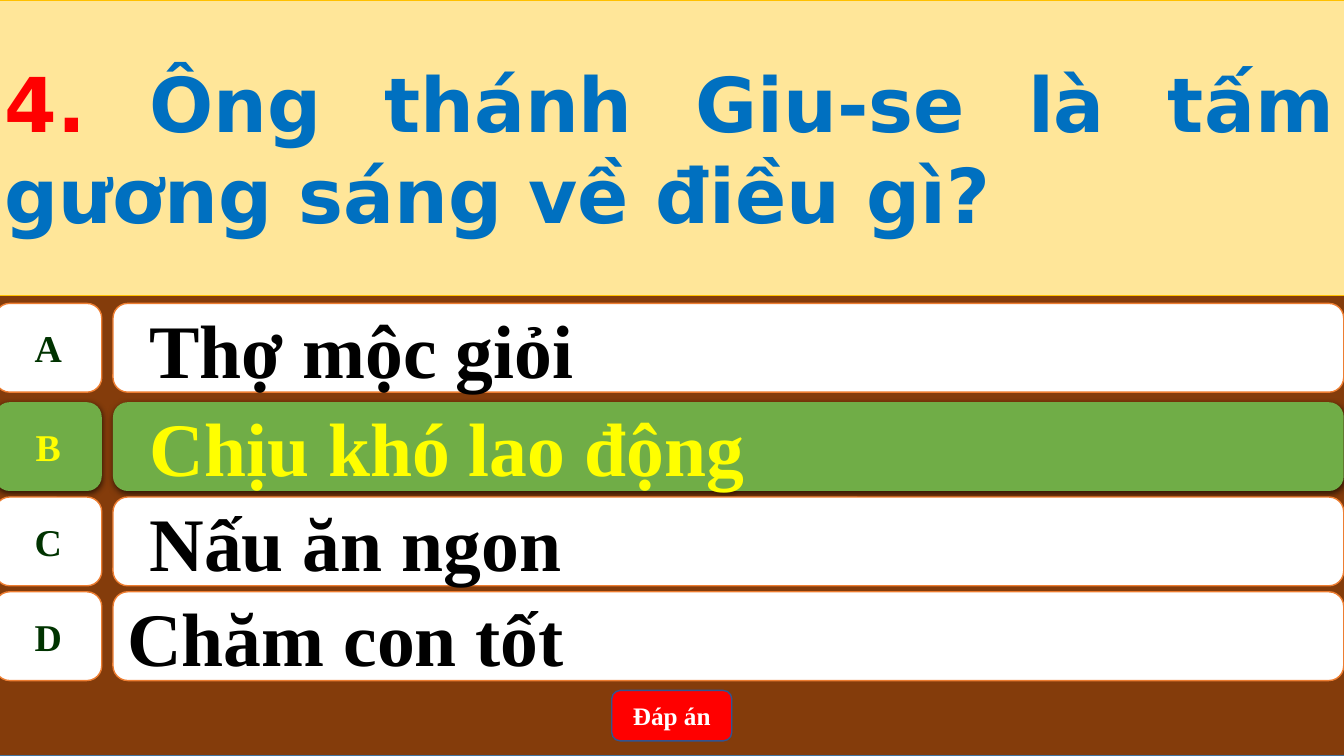
from lxml.etree import SubElement
from pptx import Presentation
from pptx.dml.color import RGBColor
from pptx.enum.shapes import MSO_SHAPE as SHAPE
from pptx.enum.text import MSO_ANCHOR as ANCHOR, PP_ALIGN as ALIGN
from pptx.oxml.ns import qn
from pptx.util import Pt

SERIF = "Times New Roman"
LEFT, WIDTH = -3.6, 964.1
ROW_HEIGHT = 63.4
# letter, answer, top, is indented, is correct
CHOICES = [
    ("A", "Thợ mộc giỏi", 216.7, True, False),
    ("B", "Chịu khó lao động", 287.3, True, True),
    ("C", "Nấu ăn ngon", 355, True, False),
    ("D", "Chăm con tốt", 422.7, False, False),
]


def rgb(color):
    return RGBColor.from_string(color)


def add_box(slide, preset, left, top, width, height, fill, line=None, weight=1):
    box = slide.shapes.add_shape(preset, Pt(left), Pt(top), Pt(width), Pt(height))
    box.shadow.inherit = False
    box.fill.solid()
    box.fill.fore_color.rgb = rgb(fill)
    if line:
        box.line.color.rgb = rgb(line)
        box.line.width = Pt(weight)
    else:
        box.line.fill.background()
    return box


def style_run(run, size, color, font=SERIF):
    run.font.name = font
    run.font.size = Pt(size)
    run.font.bold = True
    run.font.color.rgb = rgb(color)


def write(box, text, size, color, align=ALIGN.CENTER, wrap=True):
    frame = box.text_frame
    frame.text = text
    frame.word_wrap = wrap
    frame.vertical_anchor = ANCHOR.MIDDLE
    paragraph = frame.paragraphs[0]
    paragraph.alignment = align
    style_run(paragraph.runs[0], size, color)
    return paragraph


def add_shadow(box):
    effects = box._element.spPr.find(qn("a:effectLst"))
    shadow = SubElement(effects, qn("a:outerShdw"), blurRad=str(Pt(4.5)),
                        dist=str(Pt(1.5)), dir="5400000", algn="ctr", rotWithShape="0")
    black = SubElement(shadow, qn("a:srgbClr"), val="000000")
    SubElement(black, qn("a:alpha"), val="63000")


def add_question(slide, number, question):
    banner = add_box(slide, SHAPE.RECTANGLE, LEFT, 0, WIDTH, 211, "FFE699", "FFC000", 0.5)
    paragraph = write(banner, number, 54, "FF0000", ALIGN.JUSTIFY)
    paragraph.add_run().text = question
    for run, color in zip(paragraph.runs, ("FF0000", "0070C0")):
        style_run(run, 54, color, "DejaVu Sans")


def add_choice(slide, letter, answer, top, indented, correct):
    if correct:
        fill, line, letter_color, answer_color = "70AD47", None, "FFFF00", "FFFF00"
    else:
        fill, line, letter_color, answer_color = "FFFFFF", "ED7D31", "003300", "000000"

    answer_bar = add_box(slide, SHAPE.ROUNDED_RECTANGLE, 80.7, top, 879.1, ROW_HEIGHT, fill, line)
    paragraph = write(answer_bar, answer, 54, answer_color, ALIGN.LEFT)
    if indented:
        paragraph.level = 1
        properties = paragraph._p.get_or_add_pPr()
        properties.set("marL", str(Pt(36)))
        properties.set("indent", str(Pt(-20)))

    letter_key = add_box(slide, SHAPE.FLOWCHART_ALTERNATE_PROCESS, LEFT, top, 76.3, ROW_HEIGHT, fill, line)
    write(letter_key, letter, 27, letter_color, wrap=False)
    if correct:
        add_shadow(answer_bar)
        add_shadow(letter_key)


def main():
    deck = Presentation()
    deck.slide_width, deck.slide_height = Pt(960), Pt(540)
    slide = deck.slides.add_slide(deck.slide_layouts[6])

    # Brown backdrop
    add_box(slide, SHAPE.RECTANGLE, LEFT, 0, WIDTH, 540, "843C0B", "43739E")

    # Question and its choices
    add_question(slide, "4. ", "Ông thánh Giu-se là tấm gương sáng về điều gì?")
    for choice in CHOICES:
        add_choice(slide, *choice)

    # Answer button
    button = add_box(slide, SHAPE.ROUNDED_RECTANGLE, 437, 493.2, 85.7, 36, "FF0000", "325491")
    write(button, "Đáp án", 18, "FFFFFF")

    deck.save("out.pptx")


if __name__ == "__main__":
    main()
